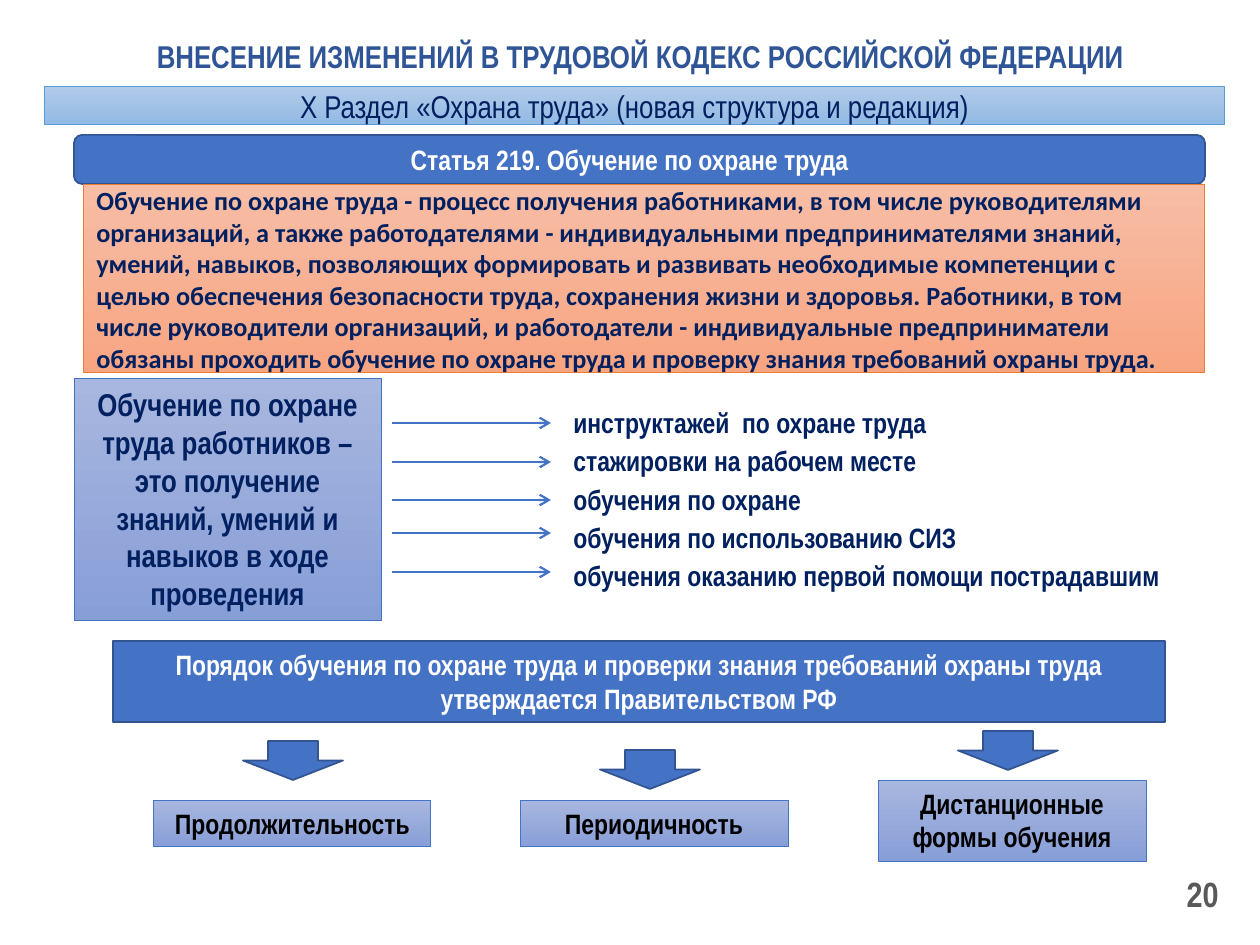
from lxml import etree
from pptx import Presentation
from pptx.dml.color import RGBColor
from pptx.enum.shapes import MSO_CONNECTOR, MSO_SHAPE
from pptx.enum.text import MSO_ANCHOR, MSO_AUTO_SIZE, PP_ALIGN
from pptx.oxml.ns import qn
from pptx.util import Pt

RECT, ROUND, DOWN = MSO_SHAPE.RECTANGLE, MSO_SHAPE.ROUNDED_RECTANGLE, MSO_SHAPE.DOWN_ARROW
LEFT, CENTER, RIGHT = PP_ALIGN.LEFT, PP_ALIGN.CENTER, PP_ALIGN.RIGHT
TOP, MIDDLE = MSO_ANCHOR.TOP, MSO_ANCHOR.MIDDLE

PX_PER_INCH = 126
SLIDE = (1260, 945)
COLORS = {
    "blue": "4472C4", "blue_edge": "325491", "title": "2F5597", "navy": "002060",
    "white": "FFFFFF", "black": "000000", "gray": "595959",
    "lilac_top": "A8B7DF", "lilac_bottom": "889ED7",
    "sky_top": "B1CBE9", "sky_bottom": "93B9E4", "sky_edge": "5B9BD5",
    "peach_top": "F7BDA5", "peach_bottom": "F8A582", "peach_edge": "ED7D31",
}
# Fill colours (two make a gradient), line colour, line width
STYLES = {
    "solid": (["blue"], "blue_edge", 1),
    "lilac": (["lilac_top", "lilac_bottom"], "blue", 0.5),
    "sky": (["sky_top", "sky_bottom"], "sky_edge", 0.5),
    "peach": (["peach_top", "peach_bottom"], "peach_edge", 0.5),
}

TITLE = "ВНЕСЕНИЕ ИЗМЕНЕНИЙ В ТРУДОВОЙ КОДЕКС РОССИЙСКОЙ ФЕДЕРАЦИИ"
SECTION = "Х Раздел «Охрана труда» (новая структура и редакция)"
ARTICLE = "Статья 219. Обучение по охране труда"
DEFINITION = (
    "Обучение по охране труда - процесс получения работниками, в том числе "
    "руководителями организаций, а также работодателями - индивидуальными "
    "предпринимателями знаний, умений, навыков, позволяющих формировать и развивать "
    "необходимые компетенции с целью обеспечения безопасности труда, сохранения жизни "
    "и здоровья. Работники, в том числе руководители организаций, и работодатели - "
    "индивидуальные предприниматели обязаны проходить обучение по охране труда и "
    "проверку знания требований охраны труда."
)
LEAD = ("Обучение по охране труда работников – это получение знаний, умений и навыков "
        "в ходе проведения")
TRAINING = [
    "инструктажей  по охране труда",
    "стажировки на рабочем месте",
    "обучения по охране",
    "обучения по использованию СИЗ",
    "обучения оказанию первой помощи пострадавшим",
]
TRAINING_ARROWS = {"left": 392, "right": 551, "tops": [423, 462, 500, 533, 572]}
ORDER = ("Порядок обучения по охране труда и проверки знания требований охраны труда "
         "утверждается Правительством РФ")
# Text, box, left and top of the arrow above it
OUTCOMES = [
    ("Продолжительность", (154, 800, 277, 47), (243, 741)),
    ("Периодичность", (520, 800, 268, 47), (600, 750)),
    ("Дистанционные формы обучения", (878, 780, 268, 81), (958, 731)),
]
ARROW_SIZE = (100, 39)
PAGE_NUMBER = "20"


def px(value):
    return round(value * 914400 / PX_PER_INCH)


def color(name):
    return RGBColor.from_string(COLORS[name])


def write(box, lines, size, ink, align=CENTER, anchor=MIDDLE, bold=True,
          font="Arial Narrow", spacing=None):
    frame = box.text_frame
    settings = {"word_wrap": True, "auto_size": MSO_AUTO_SIZE.NONE, "vertical_anchor": anchor}
    for name, value in settings.items():
        setattr(frame, name, value)
    for index, line in enumerate(lines):
        para = frame.add_paragraph() if index else frame.paragraphs[0]
        para.alignment = align
        if spacing:
            para.line_spacing = spacing
        span = para.add_run()
        span.text = line
        for name, value in {"name": font, "size": Pt(size), "bold": bold}.items():
            setattr(span.font, name, value)
        span.font.color.rgb = color(ink)


def add_box(page, kind, place, style):
    box = page.shapes.add_shape(kind, *map(px, place))
    box.shadow.inherit = False
    fills, edge, width = STYLES[style]
    if len(fills) == 1:
        box.fill.solid()
        box.fill.fore_color.rgb = color(fills[0])
    else:
        box.fill.gradient()
        box.fill.gradient_angle = 270
        for stop, name in zip(box.fill.gradient_stops, fills):
            stop.color.rgb = color(name)
    box.line.color.rgb = color(edge)
    box.line.width = Pt(width)
    return box


def add_text(page, place, lines, *args, **options):
    write(page.shapes.add_textbox(*map(px, place)), lines, *args, **options)


def add_arrow(page, left, right, top):
    arrow = page.shapes.add_connector(
        MSO_CONNECTOR.STRAIGHT, px(left), px(top), px(right), px(top))
    arrow.line.color.rgb = color("blue")
    arrow.line.width = Pt(1.25)
    etree.SubElement(arrow.line._get_or_add_ln(), qn("a:tailEnd"), type="arrow")
    etree.SubElement(arrow._element.spPr, qn("a:effectLst"))


def main():
    deck = Presentation()
    deck.slide_width, deck.slide_height = map(px, SLIDE)
    page = deck.slides.add_slide(deck.slide_layouts[5])

    title = page.shapes.title
    for name, value in zip(("left", "top", "width", "height"), (105, 16, 1071, 79)):
        setattr(title, name, px(value))
    write(title, [TITLE], 18, "title")
    add_text(page, (937, 869, 294, 50), [PAGE_NUMBER], 20, "gray", align=RIGHT)

    article = add_box(page, ROUND, (74, 135, 1131, 49), "solid")
    article.text_frame.margin_right = px(32)
    write(article, [ARTICLE], 16, "white")

    write(add_box(page, RECT, (74, 379, 307, 242), "lilac"), [LEAD], 18, "navy", anchor=TOP)
    add_text(page, (561, 393, 665, 207), TRAINING, 16, "navy", align=LEFT, spacing=1.14)
    for top in TRAINING_ARROWS["tops"]:
        add_arrow(page, TRAINING_ARROWS["left"], TRAINING_ARROWS["right"], top)

    write(add_box(page, RECT, (113, 641, 1052, 81), "solid"), [ORDER], 16, "white")
    for text, place, corner in OUTCOMES:
        write(add_box(page, RECT, place, "lilac"), [text], 16, "black", anchor=TOP)
        add_box(page, DOWN, corner + ARROW_SIZE, "solid")

    write(add_box(page, RECT, (44, 86, 1181, 39), "sky"), [SECTION], 18, "navy", bold=False)
    write(add_box(page, RECT, (84, 185, 1121, 188), "peach"), [DEFINITION], 15, "navy",
          align=LEFT, font="Calibri")
    deck.save("out.pptx")


if __name__ == "__main__":
    main()
